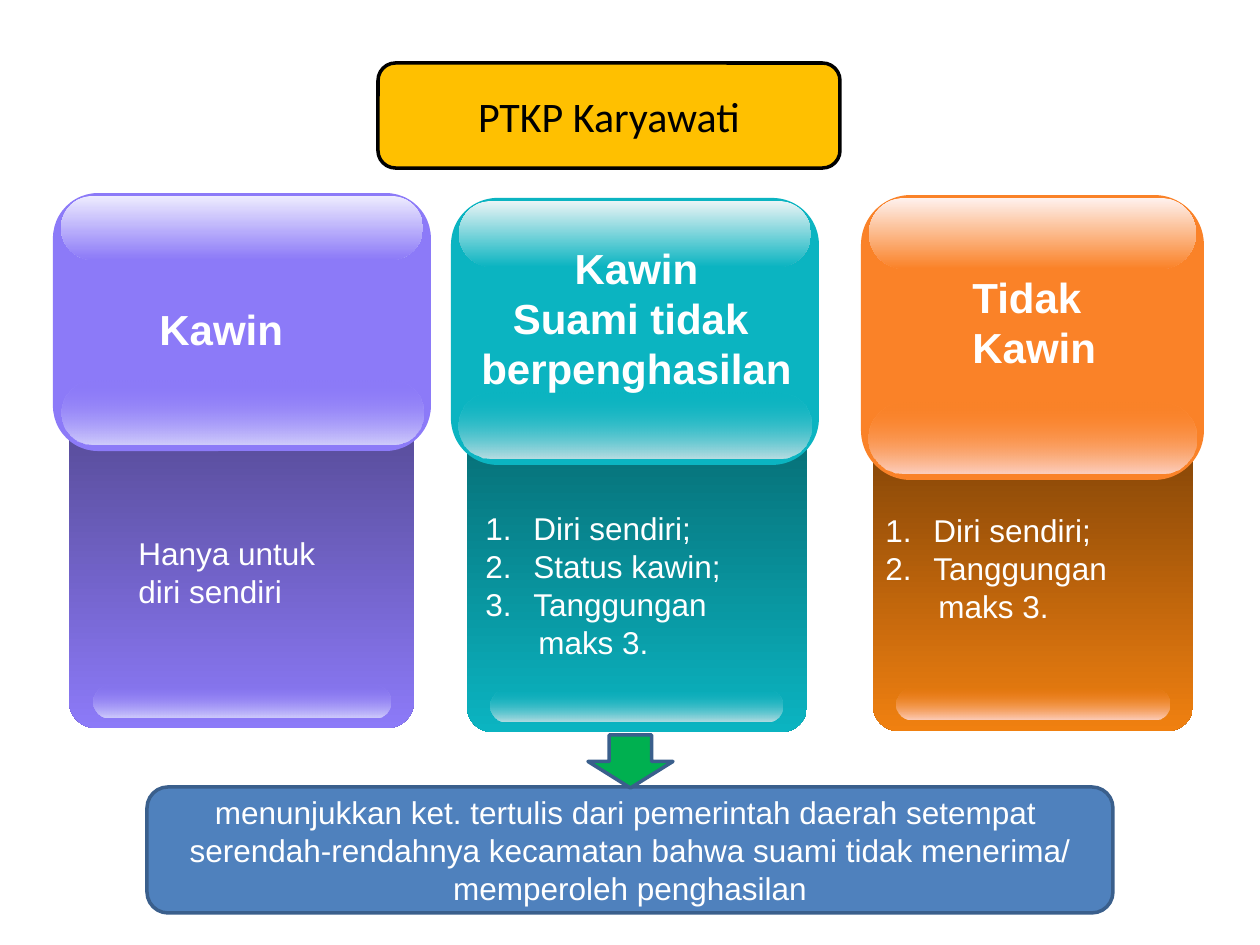
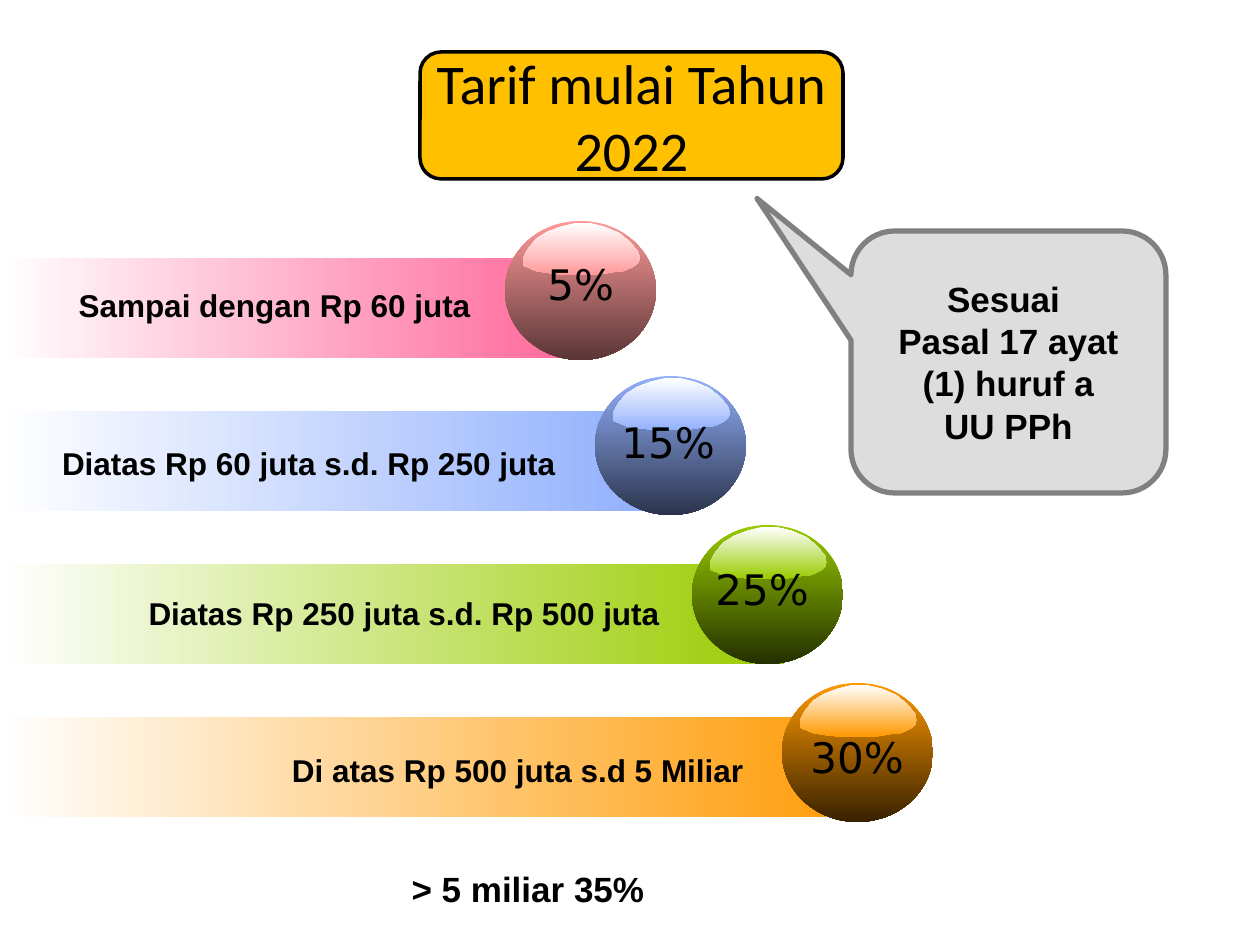
from lxml import etree
from pptx import Presentation
from pptx.dml.color import RGBColor
from pptx.enum.shapes import MSO_SHAPE as SHAPE
from pptx.enum.text import MSO_ANCHOR as ANCHOR, MSO_AUTO_SIZE as AUTO, PP_ALIGN as ALIGN
from pptx.oxml.ns import qn
from pptx.util import Pt

PX = 914400 / 126
TITLE_ONLY = 5
BLACK, WHITE, AMBER, NAVY = "000000", "FFFFFF", "FFC000", "3A5F8C"
DOWN, RIGHT = 270, 0

BODY = {"name": "Arial", "size": Pt(18), "bold": False}
LABEL = {"name": "Arial", "size": Pt(18), "bold": True}
EMPHASIS = {"name": "Arial", "size": Pt(20), "bold": True}
HEADING = {"name": "Arial", "size": Pt(24), "bold": True}
PERCENT = {"name": "DejaVu Sans", "size": Pt(24), "bold": False}

GLOSS_OUTLINE = [
    (115, 29), (117, 35), (115, 40), (110, 44), (101, 48), (91, 49), (73, 52), (42, 52),
    (25, 50), (13, 48), (6, 45), (1, 43), (0, 40), (0, 35), (5, 26), (13, 16), (24, 9),
    (37, 4), (52, 0), (67, 0), (82, 4), (96, 10), (107, 19)]

CARDS = [
    {"head": (53, 193, 378, 258), "body": (69, 393, 345, 335),
     "color": "8C7AF8", "dark": "52478F", "end": "8C7AF8", "shine": "EDEBFE", "glow": "D1CDFC",
     "title": ["Kawin"], "title_box": (147, 297, 169, 58), "align": ALIGN.LEFT,
     "lines": ["Hanya untuk", "diri sendiri"], "numbered": 0, "lines_box": (126, 528, 239, 81)},
    {"head": (861, 195, 343, 285), "body": (873, 401, 320, 330),
     "color": "FA8228", "dark": "753D06", "end": "F08010", "shine": "FEF1EE", "glow": "FDCFC0",
     "title": ["Tidak", "Kawin"], "title_box": (960, 265, 169, 102), "align": ALIGN.LEFT,
     "lines": ["Diri sendiri;", "Tanggungan", "maks 3."], "numbered": 2,
     "lines_box": (873, 505, 257, 127)},
    {"head": (451, 198, 368, 267), "body": (467, 413, 340, 319),
     "color": "0BB4C1", "dark": "066A71", "end": "0BB4C1", "shine": "EAF4F5", "glow": "BADDE2",
     "title": ["Kawin", "Suami tidak ", "berpenghasilan"], "title_box": (462, 236, 349, 151),
     "align": ALIGN.CENTER,
     "lines": ["Diri sendiri;", "Status kawin;", "Tanggungan", "maks 3."], "numbered": 3,
     "lines_box": (473, 503, 262, 165)},
]

RATES = [
    {"percent": "5%", "percent_box": (535, 252, 98, 63), "ball": (505, 221), "bar_width": 582,
     "bar": "FF6699", "color": "FF9999", "dark": "5A3636",
     "range": "Sampai dengan Rp 60 juta", "range_box": (42, 280, 441, 50)},
    {"percent": "15%", "percent_box": (609, 410, 125, 63), "ball": (595, 376), "bar_width": 643,
     "bar": "93B1FD", "color": "93B1FD", "dark": "2B344C",
     "range": "Diatas Rp 60 juta s.d. Rp 250 juta", "range_box": (32, 438, 536, 50)},
    {"percent": "25%", "percent_box": (703, 557, 125, 63), "ball": (692, 525), "bar_width": 784,
     "bar": "99CC00", "color": "99CC00", "dark": "243000",
     "range": "Diatas Rp 250 juta s.d. Rp 500 juta", "range_box": (73, 588, 599, 50)},
    {"percent": "30%", "percent_box": (798, 725, 125, 63), "ball": (782, 683), "bar_width": 881,
     "bar": "FF9900", "color": "FF9900", "dark": "382100",
     "range": "Di atas Rp 500 juta s.d 5 Miliar", "range_box": (231, 745, 525, 50)},
]


def rgb(code):
    """Turn a hex string into a colour."""
    return RGBColor.from_string(code)


def emu(*lengths):
    """Turn px lengths into EMU."""
    return [round(length * PX) for length in lengths]


def paint(shape, fill, line=None, weight=2):
    """Give a shape a solid fill and an optional outline, without shadow."""
    shape.shadow.inherit = False
    shape.fill.solid()
    shape.fill.fore_color.rgb = rgb(fill)
    if line:
        shape.line.color.rgb = rgb(line)
        shape.line.width = Pt(weight)
    else:
        shape.line.fill.background()


def blend(shape, start, end, angle=DOWN, clear_start=False):
    """Give a shape a two-colour gradient that may start fully transparent."""
    paint(shape, end)
    shape.fill.gradient()
    shape.fill.gradient_angle = angle
    for stop, position, code in zip(shape.fill.gradient_stops, (0, 1), (start, end)):
        stop.position = position
        stop.color.rgb = rgb(code)
    if clear_start:
        first = next(shape.element.spPr.iter(qn("a:srgbClr")))
        etree.SubElement(first, qn("a:alpha")).set("val", "0")


def add_preset(slide, kind, box, adjustments=()):
    """Add a preset shape at a px box."""
    shape = slide.shapes.add_shape(kind, *emu(*box))
    for index, value in enumerate(adjustments):
        shape.adjustments[index] = value
    return shape


def indent(paragraph, left, first, numbered):
    """Set the indents of a list line and its automatic number."""
    properties = paragraph._p.get_or_add_pPr()
    left, first = emu(left, first)
    properties.set("marL", str(left))
    properties.set("indent", str(first))
    if numbered:
        etree.SubElement(properties, qn("a:buFont")).set("typeface", "+mj-lt")
        etree.SubElement(properties, qn("a:buAutoNum")).set("type", "arabicPeriod")


def cast_shadow(run):
    """Put a black drop shadow behind a run of text."""
    effects = etree.Element(qn("a:effectLst"))
    shadow = etree.SubElement(effects, qn("a:outerShdw"), dist="38100", dir="2700000")
    etree.SubElement(shadow, qn("a:srgbClr")).set("val", BLACK)
    run._r.rPr.find(qn("a:solidFill")).addnext(effects)


def write(shape, lines, style, color=BLACK, align=ALIGN.CENTER, numbered=0, shadowed=False):
    """Write lines into a shape, the first ones numbered if asked."""
    frame = shape.text_frame
    for index, line in enumerate(lines):
        paragraph = frame.add_paragraph() if index else frame.paragraphs[0]
        if numbered:
            is_item = index < numbered
            indent(paragraph, 48 if is_item else 53, -48 if is_item else 0, is_item)
        paragraph.alignment = align
        run = paragraph.add_run()
        run.text = line
        for name, value in style.items():
            setattr(run.font, name, value)
        run.font.color.rgb = rgb(color)
        if shadowed:
            cast_shadow(run)


def add_text(slide, box, lines, style, wrap=False, **options):
    """Add a text box at a px box."""
    text = slide.shapes.add_textbox(*emu(*box))
    text.text_frame.word_wrap = wrap
    write(text, lines, style, **options)


def add_panel(slide, kind, box, fill, line, lines, style, weight=2, adjustments=(), color=BLACK):
    """Add an outlined shape with centred text."""
    panel = add_preset(slide, kind, box, adjustments)
    paint(panel, fill, line, weight)
    panel.text_frame.word_wrap = True
    panel.text_frame.vertical_anchor = ANCHOR.MIDDLE
    write(panel, lines, style, color)


def add_title(slide, box, text, size):
    """Place the title on an amber plate."""
    plate = add_preset(slide, SHAPE.ROUNDED_RECTANGLE, box)
    paint(plate, AMBER, BLACK)
    title = slide.shapes.title
    title.left, title.top, title.width, title.height = emu(*box)
    title.text_frame.word_wrap = True
    title.text_frame.auto_size = AUTO.NONE
    title.text_frame.vertical_anchor = ANCHOR.MIDDLE
    write(title, [text], {"name": "Calibri", "size": Pt(size)})
    plate.element.addnext(title.element)


def add_gloss(slide, box, start, end, clear_start=False):
    """Add a pill-shaped highlight."""
    pill = add_preset(slide, SHAPE.ROUNDED_RECTANGLE, box, [0.5])
    blend(pill, start, end, clear_start=clear_start)


def add_card(slide, card):
    """Add a glossy heading block over a shaded body."""
    left, top, width, height = card["head"]
    body_left, body_top, body_width, body_height = card["body"]
    color, band = card["color"], height // 4
    body = add_preset(slide, SHAPE.ROUNDED_RECTANGLE, card["body"], [0.079])
    blend(body, card["dark"], card["end"])
    foot = (body_left + 24, body_top + body_height - 42, body_width - 48, 31)
    add_gloss(slide, foot, color, card["glow"], clear_start=True)
    head = add_preset(slide, SHAPE.ROUNDED_RECTANGLE, card["head"], [0.175])
    paint(head, color)
    low_band = (left + 8, top + height - band - 6, width - 16, band)
    add_gloss(slide, low_band, color, card["glow"], clear_start=True)
    add_gloss(slide, (left + 8, top + 3, width - 16, band), card["shine"], color)
    add_text(slide, card["title_box"], card["title"], HEADING, color=WHITE,
             align=card["align"], shadowed=True)
    add_text(slide, card["lines_box"], card["lines"], BODY, color=WHITE,
             align=ALIGN.LEFT, numbered=card["numbered"])


def add_ball(slide, left, top, color, dark):
    """Add a shaded ball with a highlight on its upper half."""
    blend(add_preset(slide, SHAPE.OVAL, (left, top, 151, 139)), color, dark)
    points = [(left + 18 + x, top + 2 + y) for x, y in GLOSS_OUTLINE]
    outline = slide.shapes.build_freeform(*points[0], scale=PX)
    outline.add_line_segments(points[1:], close=True)
    blend(outline.convert_to_shape(), WHITE, color)


def add_rate(slide, index, rate):
    """Add a fading bar, its ball and their texts."""
    bar = add_preset(slide, SHAPE.RECTANGLE, (0, 258 + 153 * index, rate["bar_width"], 100))
    blend(bar, WHITE, rate["bar"], RIGHT)
    add_ball(slide, *rate["ball"], rate["color"], rate["dark"])
    add_text(slide, rate["percent_box"], [rate["percent"]], PERCENT, align=ALIGN.LEFT)
    add_text(slide, rate["range_box"], [rate["range"]], LABEL, wrap=True, align=ALIGN.RIGHT)


def build_allowances(slide):
    """Build the slide on allowances of female employees."""
    for card in CARDS:
        add_card(slide, card)
    add_panel(slide, SHAPE.ROUNDED_RECTANGLE, (147, 787, 966, 126), "4F81BD", NAVY,
              ["menunjukkan ket. tertulis dari pemerintah daerah setempat ",
               "serendah-rendahnya kecamatan bahwa suami tidak menerima/",
               "memperoleh penghasilan"], BODY, color=WHITE)
    paint(add_preset(slide, SHAPE.DOWN_ARROW, (588, 735, 85, 53)), "00B050", NAVY)
    add_title(slide, (378, 63, 462, 105), "PTKP Karyawati", 24)


def build_rates(slide):
    """Build the slide on tax rates."""
    for index, rate in enumerate(RATES):
        add_rate(slide, index, rate)
    add_panel(slide, SHAPE.ROUNDED_RECTANGULAR_CALLOUT, (851, 231, 315, 262), "DDDDDD", "808080",
              ["Sesuai ", "Pasal 17 ayat (1) huruf a", "UU PPh"], EMPHASIS, 3,
              [-0.798, -0.624, 0.167])
    add_title(slide, (420, 52, 423, 127), "Tarif mulai Tahun 2022", 32)
    add_text(slide, (297, 861, 462, 55), ["> 5 miliar 35%"], EMPHASIS, wrap=True)


def main():
    """Build and save the presentation."""
    deck = Presentation()
    deck.slide_width, deck.slide_height = emu(1260, 945)
    for build in (build_allowances, build_rates):
        build(deck.slides.add_slide(deck.slide_layouts[TITLE_ONLY]))
    deck.save("out.pptx")


if __name__ == "__main__":
    main()
